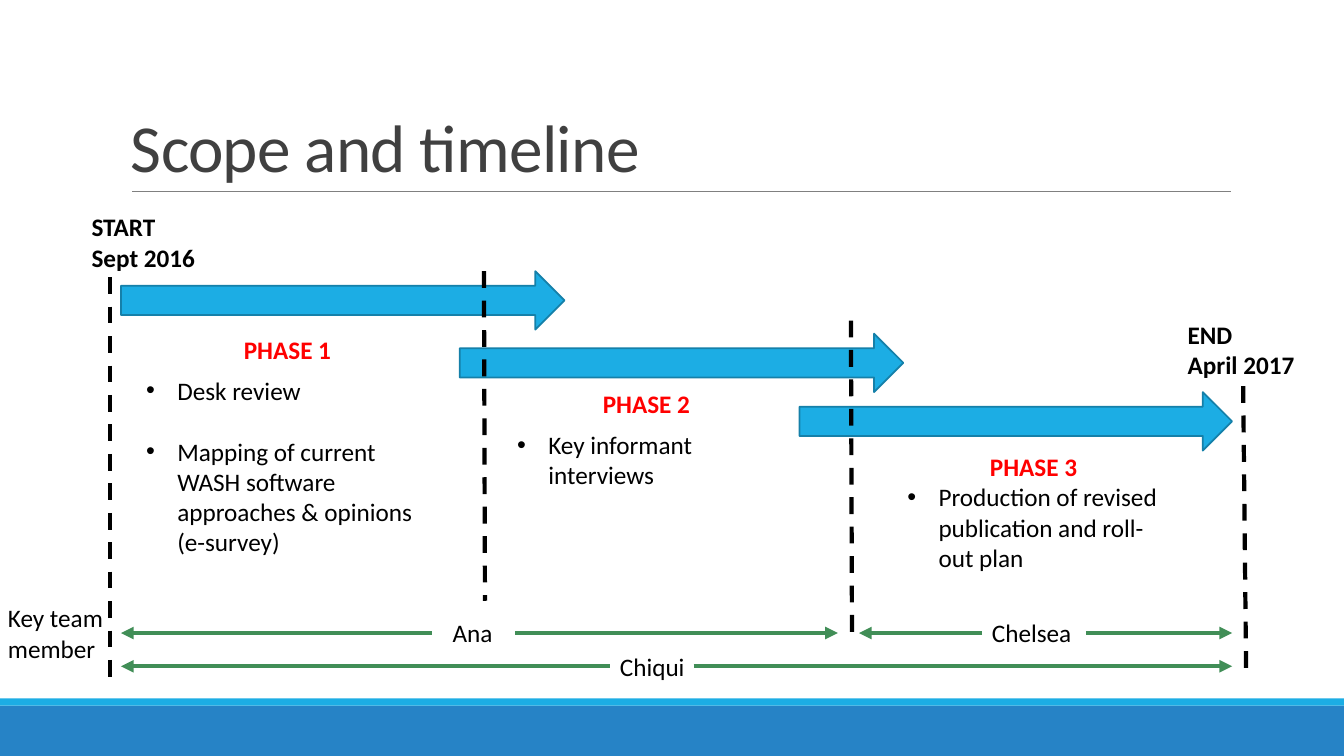
from dataclasses import dataclass

from lxml.etree import SubElement
from pptx import Presentation
from pptx.dml.color import RGBColor
from pptx.enum.dml import MSO_LINE
from pptx.enum.shapes import MSO_CONNECTOR, MSO_SHAPE
from pptx.enum.text import MSO_ANCHOR, MSO_AUTO_SIZE, PP_ALIGN
from pptx.oxml.ns import qn
from pptx.util import Pt


@dataclass(frozen=True)
class Theme:
    font: str = "Calibri"
    black: str = "000000"
    dark: str = "404040"
    grey: str = "808080"
    red: str = "FF0000"
    sky: str = "1CADE4"
    edge: str = "1580A9"
    blue: str = "2683C6"
    green: str = "418E57"
    head: int = 48
    body: int = 18
    gap: int = 22
    scale: int = 9144


def apply(target, values):
    for name, value in values.items():
        setattr(target, name, value)


class Deck:
    def __init__(self, theme):
        self.theme = theme
        self.show = Presentation()
        apply(self.show, {"slide_width": self.px(1333), "slide_height": self.px(750)})
        self.slide = self.show.slides.add_slide(self.show.slide_layouts[6])

    def px(self, count):
        return count * self.theme.scale

    def block(self, form, box, fill, edge=None):
        shape = self.slide.shapes.add_shape(form, *map(self.px, box))
        shape.shadow.inherit = False
        shape.fill.solid()
        shape.fill.fore_color.rgb = RGBColor.from_string(fill)
        if edge:
            shape.line.color.rgb = RGBColor.from_string(edge)
            shape.line.width = Pt(1.25)
        else:
            shape.line.fill.background()

    def text(self, box, lines, color=None, bold=False, align=PP_ALIGN.LEFT, dot=False):
        shape = self.slide.shapes.add_textbox(*map(self.px, box))
        frame = shape.text_frame
        apply(frame, {"word_wrap": True, "auto_size": MSO_AUTO_SIZE.SHAPE_TO_FIT_TEXT})
        frame.text = "\n".join(lines)
        for index, para in enumerate(frame.paragraphs):
            para.alignment = align
            apply(para.font, {"name": self.theme.font, "size": Pt(self.theme.body), "bold": bold})
            para.font.color.rgb = RGBColor.from_string(color or self.theme.black)
            if dot:
                para.space_before = Pt(self.theme.gap if index else 0)
                self.dot(para)
        return shape

    def dot(self, para):
        props = para._p.get_or_add_pPr()
        props.set("marL", str(self.px(31)))
        props.set("indent", str(self.px(-31)))
        SubElement(props, qn("a:buFont"), typeface="Arial")
        SubElement(props, qn("a:buChar"), char="•")

    def title(self, box, words):
        shape = self.text(box, [words], self.theme.dark)
        apply(shape.text_frame, {"auto_size": MSO_AUTO_SIZE.NONE, "vertical_anchor": MSO_ANCHOR.BOTTOM})
        para = shape.text_frame.paragraphs[0]
        para.line_spacing = 0.85
        run = para.runs[0]
        run.font.size = Pt(self.theme.head)
        run._r.get_or_add_rPr().set("spc", "-50")

    def line(self, start, end, color, width=3, dash=None, arrow=False, source=None):
        line = self.slide.shapes.add_connector(
            MSO_CONNECTOR.STRAIGHT, *map(self.px, (*start, *end)))
        if source:
            line.begin_connect(source, 1)
        line.line.color.rgb = RGBColor.from_string(color)
        apply(line.line, {"width": Pt(width), "dash_style": dash})
        props = line._element.spPr
        if arrow:
            SubElement(props.find(qn("a:ln")), qn("a:tailEnd"), type="triangle")
        SubElement(props, qn("a:effectLst"))

    def save(self):
        self.show.save("out.pptx")


def main():
    theme = Theme()
    deck = Deck(theme)
    deck.block(MSO_SHAPE.RECTANGLE, (0, 700, 1333, 50), theme.blue)
    deck.block(MSO_SHAPE.RECTANGLE, (0, 693, 1333, 7), theme.sky)
    deck.line((131, 190), (1221, 190), theme.grey, 0.5)
    deck.title((120, 31, 1100, 159), "Scope and timeline")

    phases = [
        ((120, 269, 440, 58), (171, 327), (135, 367, 308, 192),
         ["Desk review", "Mapping of current WASH software approaches & opinions (e-survey)"]),
        ((456, 331, 440, 58), (527, 380), (503, 421, 275, 71),
         ["Key informant interviews"]),
        ((793, 389, 429, 58), (911, 443), (890, 473, 275, 101),
         ["Production of revised publication and roll-out plan"]),
    ]
    for count, (arrow, label, box, tasks) in enumerate(phases, 1):
        deck.block(MSO_SHAPE.RIGHT_ARROW, arrow, theme.sky, theme.edge)
        deck.text((*label, 234, 40), [f"PHASE {count} "], theme.red, True, PP_ALIGN.CENTER)
        deck.text(box, tasks, dot=True)

    deck.text((81, 205, 130, 71), ["START", "Sept 2016"], bold=True)
    deck.text((1168, 312, 131, 71), ["END", "April 2017"], bold=True)
    deck.text((-2, 593, 135, 72), ["Key team member"])

    marks = [
        ((109, 275), (109, 677)),
        ((480, 269), (481, 596)),
        ((844, 318), (845, 628)),
        ((1233, 383), (1236, 673)),
    ]
    for top, base in marks:
        deck.line(top, base, theme.black, dash=MSO_LINE.DASH)

    team = [
        ("Ana", 439, 608, (428, 120), (511, 831)),
        ("Chelsea", 974, 608, (974, 852), (1077, 1222)),
        ("Chiqui", 605, 641, (605, 120), (688, 1222)),
    ]
    for name, left, top, *spans in team:
        label = deck.text((left, top, 143, 40), [name])
        for start, end in spans:
            deck.line((start, top + 20), (end, top + 20), theme.green, arrow=True,
                      source=label if start == left else None)
    deck.save()


if __name__ == "__main__":
    main()
